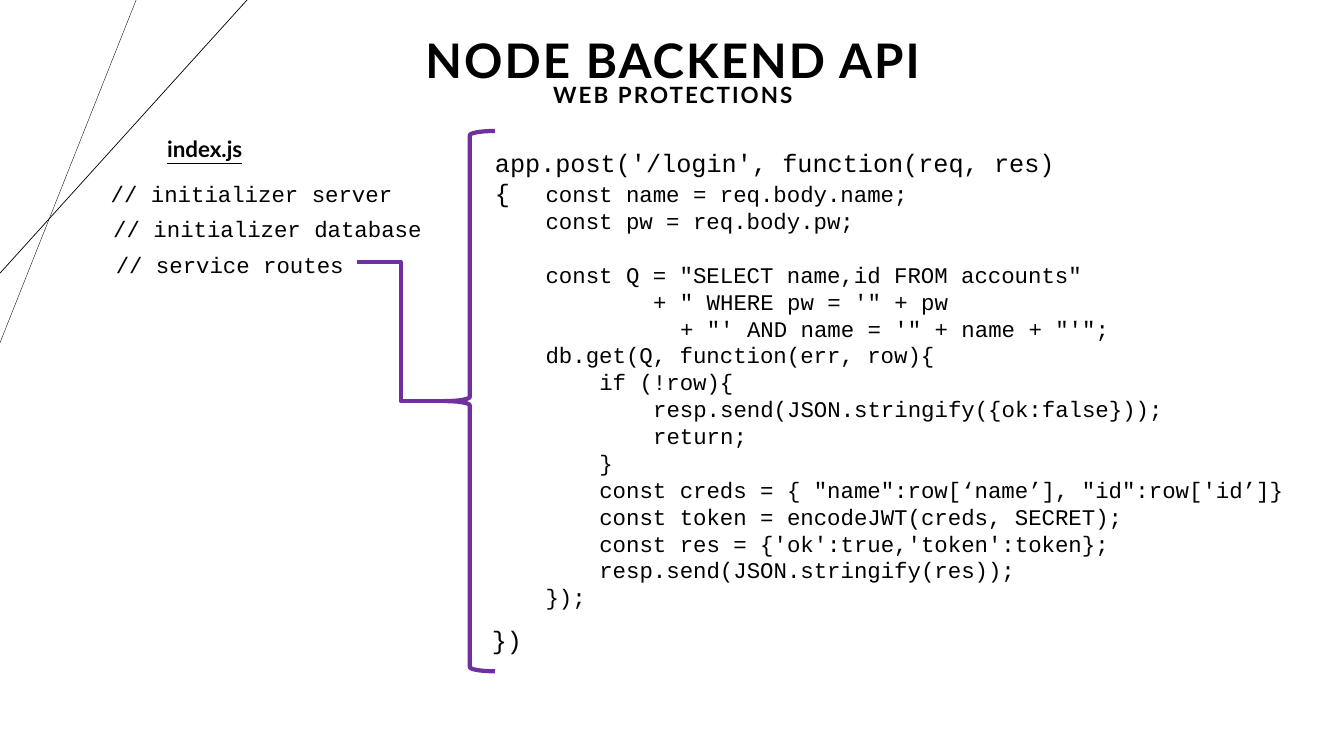
from collections import namedtuple

from lxml.etree import SubElement
from pptx import Presentation
from pptx.dml.color import RGBColor
from pptx.enum.shapes import MSO_CONNECTOR as Link, MSO_SHAPE as Shape
from pptx.enum.text import MSO_ANCHOR as Anchor, MSO_AUTO_SIZE as Fit, PP_ALIGN as Align
from pptx.oxml.ns import qn
from pptx.util import Inches, Pt

COLORS = {"ink": "000000", "accent": "7030A0"}
HEADING, CODE = "Lato", "Courier New"
WIDTH, HEIGHT = 13.33, 7.5
CODE_SIZE, SIGNATURE_SIZE = 16, 18
COLUMN = CODE_SIZE * 0.6  # points per monospaced character
LEADING = 1.2

Box = namedtuple("Box", "left top width height")

# (indent in characters, blank lines before, code)
HANDLER = [
    (4, 0, "const name = req.body.name;"),
    (4, 0, "const pw = req.body.pw;"),
    (4, 1, 'const Q = "SELECT name,id FROM accounts"'),
    (12, 0, "+ \" WHERE pw = '\" + pw"),
    (14, 0, "+ \"' AND name = '\" + name + \"'\";"),
    (4, 0, "db.get(Q, function(err, row){"),
    (8, 0, "if (!row){"),
    (12, 0, "resp.send(JSON.stringify({ok:false}));"),
    (12, 0, "return;"),
    (8, 0, "}"),
    (8, 0, "const creds = { \"name\":row[‘name’], \"id\":row['id’]}"),
    (8, 0, "const token = encodeJWT(creds, SECRET);"),
    (8, 0, "const res = {'ok':true,'token':token};"),
    (8, 0, "resp.send(JSON.stringify(res));"),
    (4, 0, "});"),
]
STEPS = [("// initializer server", 3.04), ("// initializer database", 3.31),
         ("// service routes", 2.5)]


def color(name):
    return RGBColor.from_string(COLORS[name])


def inches(box):
    return [Inches(length) for length in box]


def add_span(para, text, size, font, bold=False, underline=False, spacing=0):
    span = para.add_run()
    span.text = text
    span.font.size, span.font.name = Pt(size), font
    span.font.bold, span.font.underline = bold, underline
    span.font.color.rgb = color("ink")
    if spacing:
        span.font._element.set("spc", str(int(spacing * 100)))


def add_text_frame(page, box, wrap=True):
    frame = page.shapes.add_textbox(*inches(box)).text_frame
    frame.word_wrap = wrap
    return frame


def add_code(page, box, lines, size=CODE_SIZE, wrap=True):
    frame = add_text_frame(page, box, wrap)
    for number, (indent, blanks, text) in enumerate(lines):
        para = frame.add_paragraph() if number else frame.paragraphs[0]
        para.line_spacing = Pt(size * LEADING)
        para.space_before = Pt(blanks * size * LEADING)
        para._p.get_or_add_pPr().set("marL", str(Pt(indent * COLUMN)))
        add_span(para, text, size, CODE)


def add_line(page, start, end, kind=Link.STRAIGHT, ink="ink", weight=0.5):
    line = page.shapes.add_connector(kind, *inches(start + end))
    line.line.color.rgb, line.line.width = color(ink), Pt(weight)
    SubElement(line._element.spPr, qn("a:effectLst"))


def add_corner_lines(page):
    add_line(page, (1.35, 0), (0, 3.4), weight=0.25)
    add_line(page, (2.45, 0), (0, 2.71))


def format_heading(frame, text, size):
    frame.word_wrap, frame.auto_size = True, Fit.NONE
    frame.vertical_anchor = Anchor.MIDDLE
    para = frame.paragraphs[0]
    para.alignment, para.line_spacing = Align.CENTER, 0.9
    add_span(para, text, size, HEADING, bold=True, spacing=1.5)


def add_header(page, box):
    title = page.shapes.title
    title.left, title.top, title.width, title.height = inches(box)
    format_heading(title.text_frame, "NODE BACKEND API", 34)
    below = box._replace(top=box.top + 0.33)
    format_heading(add_text_frame(page, below), "WEB PROTECTIONS", 16)


def add_outline(page, box):
    """Place the file name and the steps of the file below it."""
    name = Box(box.left + 0.56, box.top, 0.96, 0.37)
    add_span(add_text_frame(page, name, wrap=False).paragraphs[0],
             "index.js", 16, HEADING, bold=True, underline=True)
    for row, (text, width) in enumerate(STEPS):
        place = Box(box.left + row * 0.025, box.top + 0.45 + row * 0.35, width, 0.37)
        add_code(page, place, [(0, 0, text)], wrap=False)


def add_handler(page, box):
    """Place the route's code beside a brace that spans the box's height."""
    brace = page.shapes.add_shape(
        Shape.LEFT_BRACE, *inches(box._replace(width=0.5)))
    brace.shadow.inherit = False
    brace.fill.background()
    brace.line.color.rgb, brace.line.width = color("accent"), Pt(3)
    left = box.left + 0.37
    add_code(page, Box(left, box.top + 0.44, box.width - 0.37, 4.41), HANDLER)
    add_code(page, Box(left + 0.03, box.top + 0.11, 5.88, 0.4),
             [(0, 0, "app.post('/login', function(req, res){")], SIGNATURE_SIZE)
    add_code(page, Box(left, box.top + 4.84, 0.85, 0.4),
             [(0, 0, "})")], SIGNATURE_SIZE)


def main():
    deck = Presentation()
    deck.slide_width, deck.slide_height = Inches(WIDTH), Inches(HEIGHT)
    page = deck.slides.add_slide(deck.slide_layouts[5])
    handler = Box(4.41, 1.3, 8.54, 5.36)
    add_corner_lines(page)
    add_header(page, Box(0.02, -0.1, WIDTH - 0.02, 1.45))
    add_outline(page, Box(1, 1.29, 3.33, 1.5))
    add_handler(page, handler)
    add_line(page, (3.54, 2.6), (handler.left, handler.top + handler.height / 2),
             Link.ELBOW, "accent", 3)
    deck.save("out.pptx")


if __name__ == "__main__":
    main()
